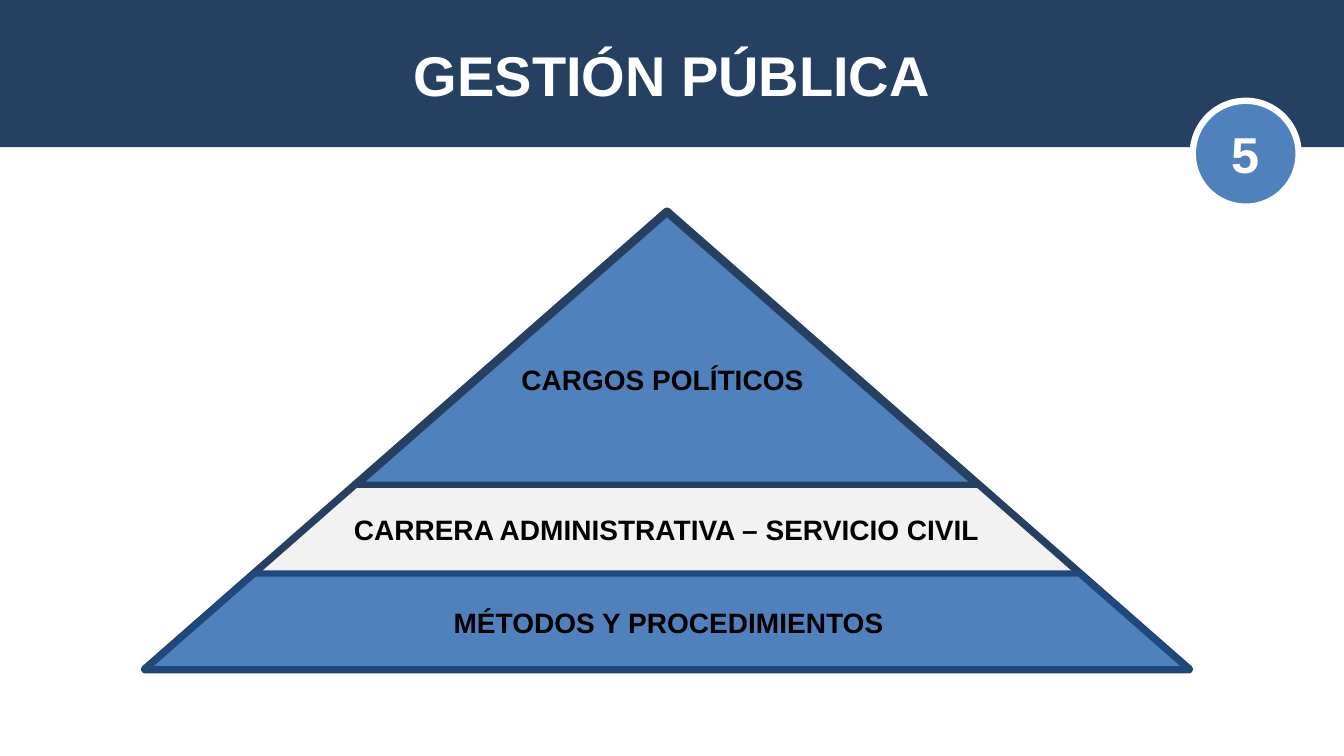
from pptx import Presentation, util as u
from pptx.dml.color import RGBColor
from pptx.enum import shapes, text

PX = 9144
NAVY = RGBColor(0x25, 0x40, 0x61)
DEEP = RGBColor(0x1F, 0x49, 0x7D)
BLUE = RGBColor(0x4F, 0x81, 0xBD)
GREY = RGBColor(0xF2, 0xF2, 0xF2)
WHITE = RGBColor(255, 255, 255)
BLACK = RGBColor(0, 0, 0)
KIND = shapes.MSO_SHAPE

deck = Presentation()
deck.slide_width, deck.slide_height = 1333 * PX, 750 * PX
slide = deck.slides.add_slide(deck.slide_layouts[5])


def draw(kind, box, fill, line=None, width=0):
    shape = slide.shapes.add_shape(kind, *[n * PX for n in box])
    shape.shadow.inherit = False
    shape.fill.solid()
    shape.fill.fore_color.rgb = fill
    if line is None:
        shape.line.fill.background()
    else:
        shape.line.color.rgb = line
        shape.line.width = u.Pt(width)
    return shape


def write(shape, words, size, color, wrap=True):
    frame = shape.text_frame
    frame.text = words
    frame.word_wrap = wrap
    frame.auto_size = text.MSO_AUTO_SIZE.NONE
    line = frame.paragraphs[0]
    line.alignment = text.PP_ALIGN.CENTER
    line.font.name = "Arial"
    line.font.size = u.Pt(size)
    line.font.bold = True
    line.font.color.rgb = color


BASE = 664
for top, fill, edge, width in [
    (210, BLUE, NAVY, 6),
    (481, GREY, NAVY, 4.5),
    (569, BLUE, DEEP, 4.5),
]:
    tier = draw(KIND.TRAPEZOID, (144, top, 1035, BASE - top), fill, edge, width)
    tier.adjustments[0] = 1.14

for words, left, top, width, wrap in [
    ("MÉTODOS Y PROCEDIMIENTOS", 242, 596, 842, True),
    ("CARRERA ADMINISTRATIVA – SERVICIO CIVIL", 338, 504, 646, False),
    ("CARGOS POLÍTICOS", 487, 355, 340, True),
]:
    label = slide.shapes.add_textbox(left * PX, top * PX, width * PX, 44 * PX)
    write(label, words, 20, BLACK, wrap)

band = draw(KIND.RECTANGLE, (0, 0, 1333, 146), NAVY)
title = slide.shapes.title
title.left, title.top, title.width, title.height = 0, 11 * PX, 1333 * PX, 125 * PX
write(title, "GESTIÓN PÚBLICA", 40, WHITE)
title.text_frame.vertical_anchor = text.MSO_ANCHOR.MIDDLE
band.element.addnext(title.element)

draw(KIND.OVAL, (1183, 100, 105, 105), BLUE, WHITE, 4.5)
number = slide.shapes.add_textbox(1211 * PX, 117 * PX, 48 * PX, 71 * PX)
write(number, "5", 36, WHITE, False)

deck.save("out.pptx")
